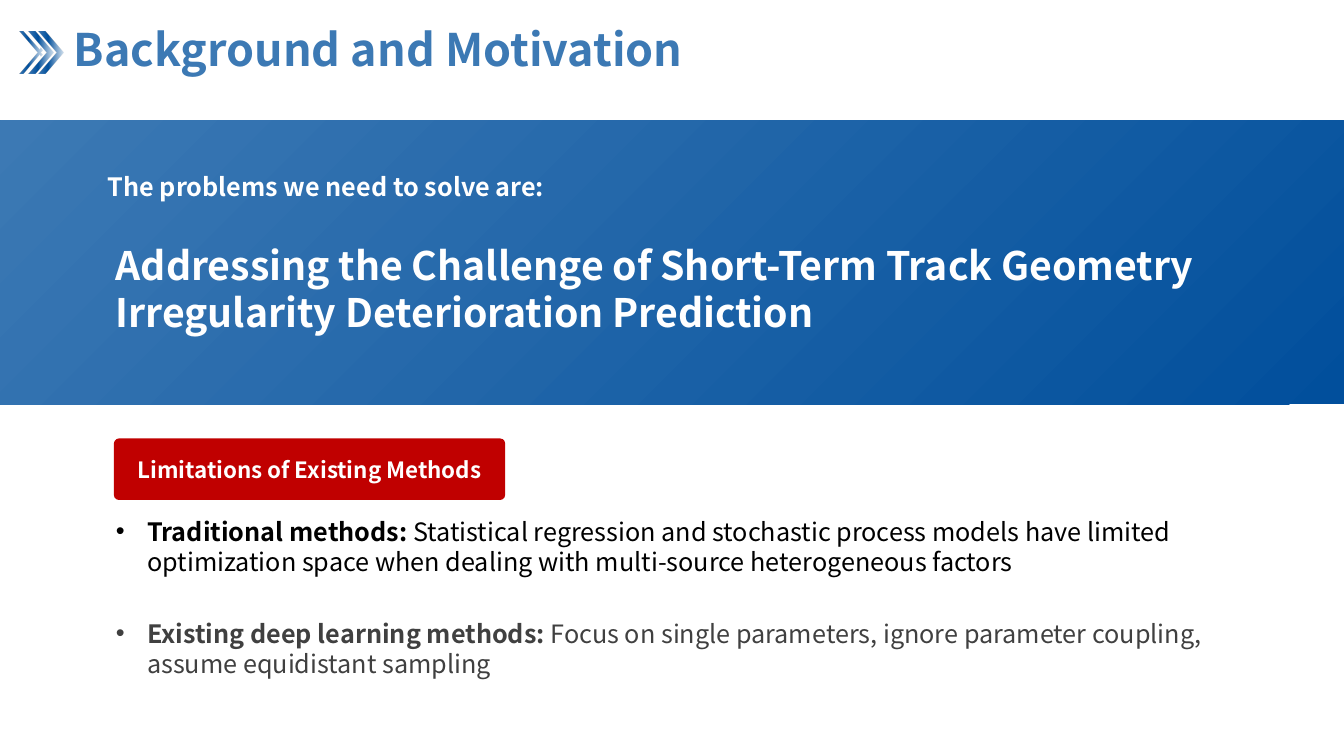
"""Build the Background and Motivation slide."""
from dataclasses import dataclass

from lxml import etree
from pptx import Presentation
from pptx import util as u
from pptx.dml import color
from pptx.enum import shapes, text
from pptx.oxml import ns

FONT = "Noto Sans CJK SC"
HUES = {"sky": "3C79B4", "navy": "014F9C", "white": "FFFFFF",
        "red": "C00000", "black": "000000", "grey": "404040"}
FADE = [(0, "sky", 24), (61, "navy", 100), (100, "sky", 100)]
DEEP = [(0, "navy", 100), (100, "sky", 100)]
WING = [(7, 0), (25, 21), (7, 42), (0, 42), (18, 21), (0, 0)]
TAIL = [(23, 19), (21, 16), (20, 18), (4, 0), (0, 0), (18, 21), (0, 42),
        (4, 42), (20, 23), (21, 25), (23, 23), (21, 21)]


@dataclass
class Mark:
    left: int
    dots: list


@dataclass
class Note:
    box: tuple
    words: str
    size: int


@dataclass
class Point:
    top: float
    lead: str
    rest: str
    hue: str


MARKS = [Mark(38, WING), Mark(28, WING), Mark(19, TAIL)]
NOTES = [
    Note((0.97, 1.65, 4.86, 0.4), "The problems we need to solve are:", 18),
    Note((1.05, 2.34, 11.38, 1.04), "Addressing the Challenge of Short-Term Track "
         "Geometry Irregularity Deterioration Prediction", 28),
]
POINTS = [
    Point(5.07, "Traditional methods: ", "Statistical regression and stochastic "
          "process models have limited optimization space when dealing with "
          "multi-source heterogeneous factors", "black"),
    Point(6.08, "Existing deep learning methods: ", "Focus on single parameters, "
          "ignore parameter coupling, assume equidistant sampling", "grey"),
]


def apply(item, **form) -> None:
    for name, value in form.items():
        setattr(item, name, value)


def rgb(hue: str) -> color.RGBColor:
    return color.RGBColor.from_string(HUES[hue])


def place(shape, box: tuple) -> None:
    sides = ("left", "top", "width", "height")
    apply(shape, **{side: u.Inches(size) for side, size in zip(sides, box)})


def write(para, words: str, size: int, hue: str, bold: bool = True) -> None:
    run = para.add_run()
    run.text = words
    apply(run.font, name=FONT, size=u.Pt(size), bold=bold)
    run.font.color.rgb = rgb(hue)


def plain(shape) -> None:
    shape.shadow.inherit = False
    shape.line.fill.background()


def blend(shape, stops: list, angle: int) -> None:
    plain(shape)
    shape.fill.gradient()
    shape.fill.gradient_angle = angle
    roll = shape.fill._xPr.find(".//" + ns.qn("a:gsLst"))
    for old in list(roll):
        roll.remove(old)
    for spot, hue, alpha in stops:
        stop = etree.SubElement(roll, ns.qn("a:gs"), pos=str(spot * 1000))
        tint = etree.SubElement(stop, ns.qn("a:srgbClr"), val=HUES[hue])
        if alpha < 100:
            etree.SubElement(tint, ns.qn("a:alpha"), val=str(alpha * 1000))


def draw_mark(slide, mark: Mark) -> None:
    dots = [(mark.left + x, 31 + y) for x, y in mark.dots]
    form = slide.shapes.build_freeform(*dots[0], scale=u.Inches(0.01))
    form.add_line_segments(dots[1:], close=True)
    blend(form.convert_to_shape(), FADE, 180)


def draw_note(slide, note: Note) -> None:
    shape = slide.shapes.add_textbox(*map(u.Inches, note.box))
    apply(shape.text_frame, word_wrap=True,
          auto_size=text.MSO_AUTO_SIZE.SHAPE_TO_FIT_TEXT)
    write(shape.text_frame.paragraphs[0], note.words, note.size, "white")


def draw_point(shape, point: Point) -> None:
    place(shape, (1.05, point.top, 11.25, 0.71))
    apply(shape.text_frame, word_wrap=True, vertical_anchor=text.MSO_ANCHOR.TOP,
          auto_size=text.MSO_AUTO_SIZE.SHAPE_TO_FIT_TEXT)
    para = shape.text_frame.paragraphs[0]
    apply(para, level=1, space_before=u.Pt(0), space_after=u.Pt(6))
    write(para, point.lead, 18, point.hue)
    write(para, point.rest, 18, point.hue, False)
    props = para._p.get_or_add_pPr()
    props.set("marL", str(u.Inches(0.31)))
    props.set("indent", str(u.Inches(-0.31)))
    etree.SubElement(props, ns.qn("a:buFont"), typeface="Arial")
    etree.SubElement(props, ns.qn("a:buChar"), char="•")


def draw_title(shape) -> None:
    place(shape, (0.63, 0.21, 11.16, 0.61))
    apply(shape.text_frame, word_wrap=True, auto_size=text.MSO_AUTO_SIZE.NONE,
          vertical_anchor=text.MSO_ANCHOR.MIDDLE)
    para = shape.text_frame.paragraphs[0]
    apply(para, alignment=text.PP_ALIGN.LEFT, line_spacing=0.9)
    write(para, "Background and Motivation", 32, "sky")


def draw_label(slide) -> None:
    label = slide.shapes.add_shape(shapes.MSO_SHAPE.ROUNDED_RECTANGLE,
                                   *map(u.Inches, (1.13, 4.35, 3.88, 0.61)))
    plain(label)
    label.adjustments[0] = 0.08
    label.fill.solid()
    label.fill.fore_color.rgb = rgb("red")
    label.text_frame.vertical_anchor = text.MSO_ANCHOR.MIDDLE
    para = label.text_frame.paragraphs[0]
    para.alignment = text.PP_ALIGN.CENTER
    write(para, "Limitations of Existing Methods", 16, "white")


def main() -> None:
    deck = Presentation()
    apply(deck, slide_width=u.Inches(13.33), slide_height=u.Inches(7.5))
    slide = deck.slides.add_slide(deck.slide_layouts[3])
    title, *lists = slide.placeholders
    draw_title(title)
    for shape, point in zip(lists, POINTS):
        draw_point(shape, point)
    for mark in MARKS:
        draw_mark(slide, mark)
    band = slide.shapes.add_shape(shapes.MSO_SHAPE.RECTANGLE,
                                  *map(u.Inches, (0, 1.2, 13.33, 2.81)))
    blend(band, DEEP, 135)
    for note in NOTES:
        draw_note(slide, note)
    draw_label(slide)
    deck.save("out.pptx")


if __name__ == "__main__":
    main()
